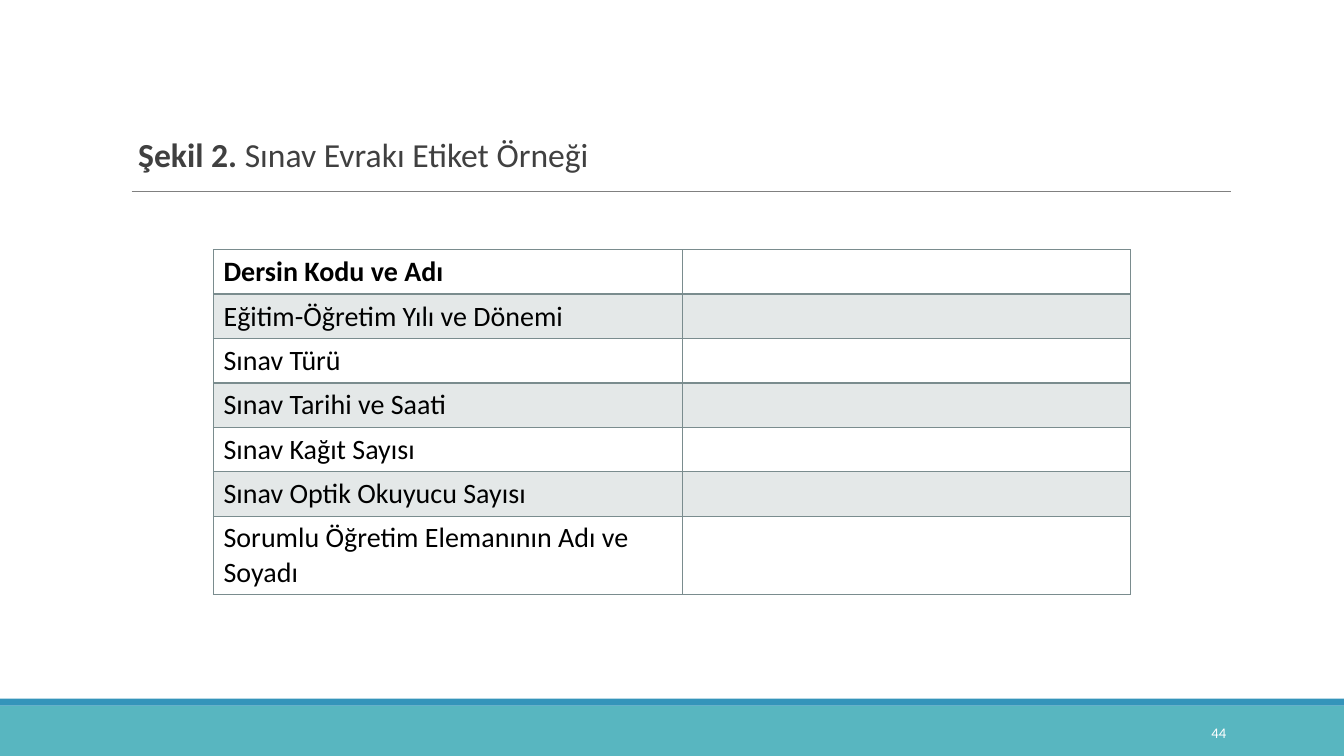
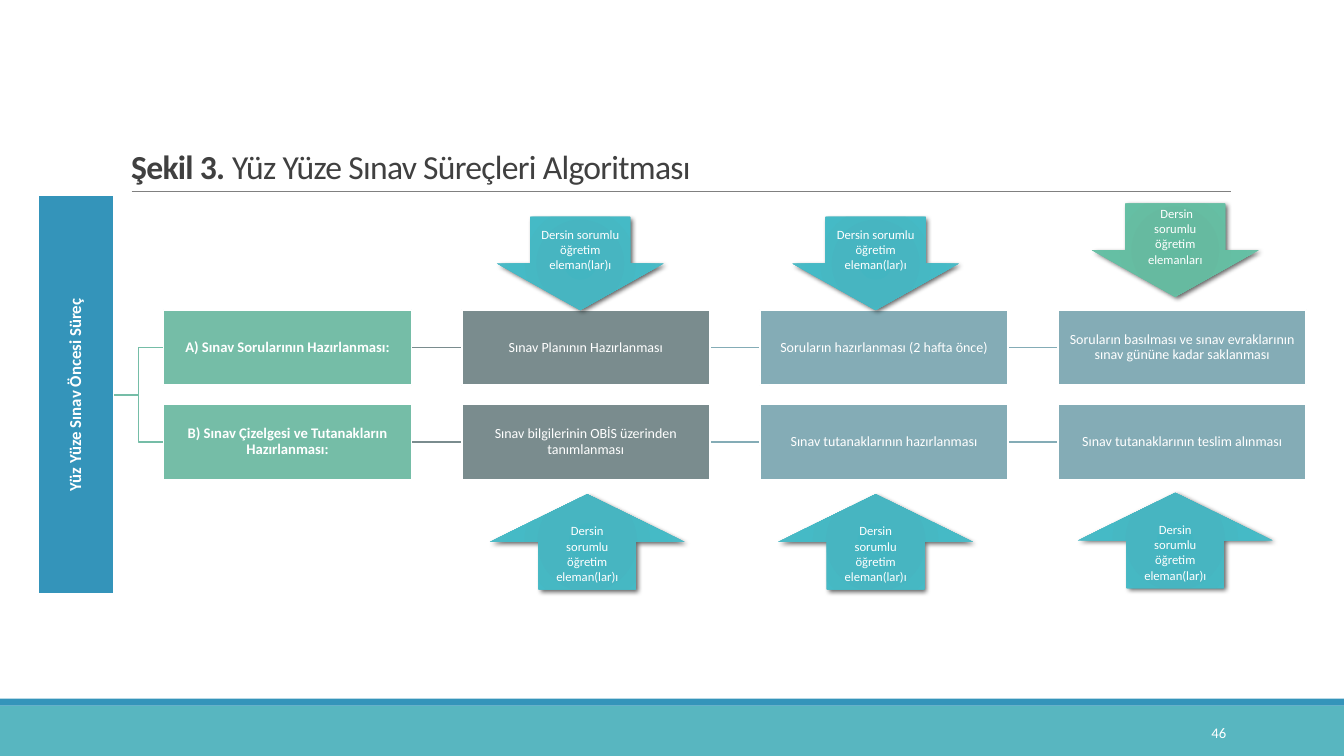
from lxml import etree
from pptx import Presentation
from pptx.dml.color import RGBColor
from pptx.enum import shapes as kinds, text as txt
from pptx.oxml import ns, parse_xml
from pptx.util import Pt

COLORS = {
    "band": "58B6C0", "blue": "3494BA", "rule": "808080", "title": "404040",
    "green": "75BDA7", "slate": "7A8C8E", "steel": "84ACB6",
    "stripe": "E4E8E8", "white": "FFFFFF", "black": "000000",
}
TEAL_STOPS = {0: "43B5C1", 34: "47B5C1", 70: "45BAC6", 100: "53BAC5"}
GREEN_STOPS = {0: "63BAA0", 34: "66BAA0", 70: "65BFA4", 100: "71C1A8"}
FONT = "Calibri"
WIDTH, HEIGHT = 960, 540
RECT = kinds.MSO_SHAPE.RECTANGLE
DOWN, UP = kinds.MSO_SHAPE.DOWN_ARROW, kinds.MSO_SHAPE.UP_ARROW
CENTER = txt.PP_ALIGN.CENTER
MIDDLE = txt.MSO_ANCHOR.MIDDLE

LABEL_ROWS = [
    "Dersin Kodu ve Adı", "Eğitim-Öğretim Yılı ve Dönemi", "Sınav Türü",
    "Sınav Tarihi ve Saati", "Sınav Kağıt Sayısı", "Sınav Optik Okuyucu Sayısı",
    "Sorumlu Öğretim Elemanının Adı ve Soyadı",
]
STAGE_COLORS = ["green", "slate", "steel", "steel"]
PROCESSES = [
    ["A) Sınav Sorularının Hazırlanması:", "Sınav Planının Hazırlanması",
     "Soruların hazırlanması (2 hafta önce)",
     "Soruların basılması ve sınav evraklarının sınav gününe kadar saklanması"],
    ["B) Sınav Çizelgesi ve Tutanakların Hazırlanması:",
     "Sınav bilgilerinin OBİS üzerinden tanımlanması",
     "Sınav tutanaklarının hazırlanması", "Sınav tutanaklarının teslim alınması"],
]
LECTURER = "Dersin sorumlu öğretim eleman(lar)ı"
ARROWS = [
    (DOWN, 355, 155, LECTURER, TEAL_STOPS),
    (DOWN, 566, 155, LECTURER, TEAL_STOPS),
    (DOWN, 780, 145.5, " Dersin sorumlu öğretim elemanları", GREEN_STOPS),
    (UP, 350, 353, LECTURER, TEAL_STOPS),
    (UP, 556, 353, LECTURER, TEAL_STOPS),
    (UP, 770, 352, LECTURER, TEAL_STOPS),
]


def rgb(name):
    return RGBColor.from_string(COLORS[name])


def apply(target, **values):
    for attribute, value in values.items():
        setattr(target, attribute, value)


def write(paragraph, wording, size, color="white", bold=False):
    run = paragraph.add_run()
    run.text = wording
    apply(run.font, name=FONT, size=Pt(size), bold=bold)
    run.font.color.rgb = rgb(color)
    return run


def add_block(slide, kind, left, top, width, height, fill=None, outline=None):
    block = slide.shapes.add_shape(kind, Pt(left), Pt(top), Pt(width), Pt(height))
    block.shadow.inherit = False
    if fill:
        block.fill.solid()
        block.fill.fore_color.rgb = rgb(fill)
    if outline:
        block.line.color.rgb = rgb(outline)
        block.line.width = Pt(1.25)
    else:
        block.line.fill.background()
    return block


def add_line(slide, kind, color, width, start=(0, 0), end=(0, 0)):
    line = slide.shapes.add_connector(kind, *(Pt(v) for v in (*start, *end)))
    line.line.color.rgb = rgb(color)
    line.line.width = Pt(width)
    etree.SubElement(line._element.spPr, ns.qn("a:effectLst"))
    return line


def join(slide, source, target, color, kind):
    """Link right side to left side, behind the boxes' white outlines."""
    link = add_line(slide, kind, color, 1.25)
    link.begin_connect(source, 3)
    link.end_connect(target, 1)
    slide.shapes[0]._element.addprevious(link._element)


def add_title(slide, lead, rest, box, anchor, line_spacing=1, tracking=0):
    title = slide.shapes.title
    apply(title, **dict(zip(("left", "top", "width", "height"), map(Pt, box))))
    apply(title.text_frame, vertical_anchor=anchor, word_wrap=True,
          auto_size=txt.MSO_AUTO_SIZE.NONE)
    heading = title.text_frame.paragraphs[0]
    apply(heading, alignment=txt.PP_ALIGN.LEFT, line_spacing=line_spacing,
          space_before=Pt(0))
    for wording, bold in ((lead, True), (rest, False)):
        run = write(heading, wording, 24, "title", bold)
        run.font._element.set("spc", str(tracking))


def add_frame(slide, page):
    """Draw the title rule, the bottom bands and the page number."""
    add_block(slide, RECT, 0, 504, WIDTH, 36, "band")
    add_block(slide, RECT, 0, 499, WIDTH, 5, "blue")
    add_line(slide, kinds.MSO_CONNECTOR.STRAIGHT, "rule", 0.5, (94, 136.5), (879, 136.5))
    number = slide.shapes.add_textbox(Pt(780), Pt(508.5), Pt(103), Pt(29)).text_frame
    apply(number, word_wrap=True, vertical_anchor=MIDDLE)
    number.paragraphs[0].alignment = txt.PP_ALIGN.RIGHT
    write(number.paragraphs[0], page, 10.5)


def set_borders(cell, top, bottom):
    properties = cell._tc.get_or_add_tcPr()
    for place, (side, width) in enumerate(
            (("lnL", 1), ("lnR", 1), ("lnT", top), ("lnB", bottom))):
        properties.insert(place, parse_xml(
            f'<a:{side} {ns.nsdecls("a")} w="{Pt(width)}"><a:solidFill>'
            f'<a:srgbClr val="{COLORS["slate"]}"/></a:solidFill></a:{side}>'))


def add_label_table(slide, labels):
    table = slide.shapes.add_table(len(labels), 2, Pt(152.5), Pt(178.5),
                                   Pt(655), Pt(246)).table
    for column, width in zip(table.columns, (335, 320)):
        column.width = Pt(width)
    for index, label in enumerate(labels):
        table.rows[index].height = Pt(56 if index == len(labels) - 1 else 31.7)
        for cell in table.rows[index].cells:
            if index % 2:
                cell.fill.solid()
                cell.fill.fore_color.rgb = rgb("stripe")
            else:
                cell.fill.background()
            set_borders(cell, 2 if index == 1 else 1, 2 if index == 0 else 1)
        # An empty answer cell keeps the label's size for its row height
        write(table.cell(index, 0).text_frame.paragraphs[0], label, 20, "black", index == 0)
        table.cell(index, 1).text_frame.paragraphs[0].font.size = Pt(20)


def add_step(slide, wording, box, fill, size, bold):
    step = add_block(slide, RECT, *box, fill, "white")
    inset = dict.fromkeys(
        ("margin_left", "margin_right", "margin_top", "margin_bottom"), Pt(0.75))
    apply(step.text_frame, word_wrap=True, vertical_anchor=MIDDLE, **inset)
    apply(step.text_frame.paragraphs[0], alignment=CENTER, line_spacing=0.9)
    write(step.text_frame.paragraphs[0], wording, size, bold=bold)
    return step


def add_process_chart(slide):
    phase = add_step(slide, "Yüz Yüze Sınav Öncesi Süreç", (27, 139.5, 54, 285),
                     "blue", 12, True)
    phase.text_frame._txBody.bodyPr.set("vert", "vert270")
    for row, steps in enumerate(PROCESSES):
        previous = phase
        for column, (wording, color) in enumerate(zip(steps, STAGE_COLORS)):
            first = column == 0
            box = (116.75 + 213 * column, 221.25 + 67.5 * row, 177.25, 54)
            step = add_step(slide, wording, box, color, 10.5 if first else 10, first)
            kind = kinds.MSO_CONNECTOR.ELBOW if first else kinds.MSO_CONNECTOR.STRAIGHT
            join(slide, previous, step, color, kind)
            previous = step


def add_role_arrow(slide, kind, left, top, wording, stops):
    width, height = (119, 66.5) if kind == DOWN else (139, 68)
    arrow = add_block(slide, kind, left, top, width, height)
    if kind == DOWN:
        arrow.adjustments[0] = 0.6
    properties = arrow._element.spPr
    colors = "".join(f'<a:gs pos="{at * 1000}"><a:srgbClr val="{color}"/></a:gs>'
                     for at, color in stops.items())
    properties.find(ns.qn("a:prstGeom")).addnext(parse_xml(
        f'<a:gradFill {ns.nsdecls("a")}><a:gsLst>{colors}</a:gsLst><a:path path="circle">'
        '<a:fillToRect l="100000" t="100000" r="100000" b="100000"/></a:path></a:gradFill>'))
    properties.find(ns.qn("a:effectLst")).append(parse_xml(
        f'<a:outerShdw {ns.nsdecls("a")} blurRad="{Pt(3.5)}" dist="{Pt(2)}" dir="2700000">'
        f'<a:srgbClr val="{COLORS["black"]}"><a:alpha val="60000"/></a:srgbClr></a:outerShdw>'))
    apply(arrow.text_frame, word_wrap=True, vertical_anchor=MIDDLE)
    arrow.text_frame.paragraphs[0].alignment = CENTER
    write(arrow.text_frame.paragraphs[0], wording, 9)


def main():
    deck = Presentation()
    apply(deck, slide_width=Pt(WIDTH), slide_height=Pt(HEIGHT))
    title_only = deck.slide_layouts[5]

    label_slide = deck.slides.add_slide(title_only)
    add_title(label_slide, "Şekil 2. ", "Sınav Evrakı Etiket Örneği",
              (91.5, 92, 492, 36), txt.MSO_ANCHOR.TOP)
    add_frame(label_slide, "44")
    add_label_table(label_slide, LABEL_ROWS)

    process_slide = deck.slides.add_slide(title_only)
    add_title(process_slide, "Şekil 3. ", "Yüz Yüze Sınav Süreçleri Algoritması",
              (86.5, 22.5, 792, 114), txt.MSO_ANCHOR.BOTTOM, 0.85, -50)
    add_frame(process_slide, "46")
    add_process_chart(process_slide)
    for arrow in ARROWS:
        add_role_arrow(process_slide, *arrow)

    deck.save("out.pptx")


if __name__ == "__main__":
    main()
